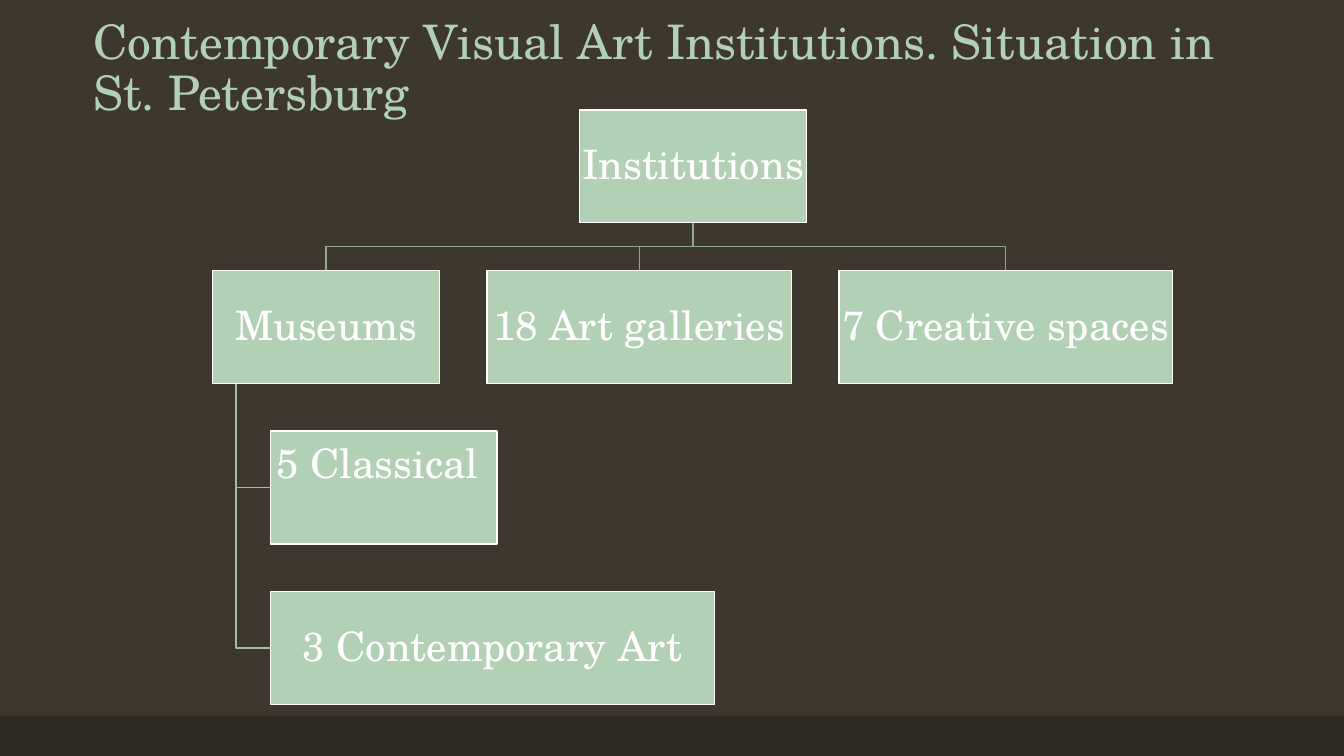
"""Build the slide on contemporary visual art institutions in St. Petersburg."""
from pptx import Presentation
from pptx.dml.color import RGBColor
from pptx.enum.shapes import MSO_SHAPE
from pptx.enum.text import MSO_ANCHOR, PP_ALIGN
from pptx.util import Inches, Pt

FONT = "TeX Gyre Schola"
GREEN = "B2D0B4"
WHITE = "FFFFFF"


def rgb(value):
    return RGBColor.from_string(value)


def write(sp, text, size, color, frame, align):
    tf = sp.text_frame
    for name, value in frame.items():
        setattr(tf, name, value)
    p = tf.paragraphs[0]
    p.alignment = align
    p.line_spacing = 0.9
    r = p.add_run()
    r.text = text
    for name, value in {"name": FONT, "size": Pt(size)}.items():
        setattr(r.font, name, value)
    r.font.color.rgb = rgb(color)


prs = Presentation()
prs.slide_width, prs.slide_height = Inches(13.33), Inches(7.5)
s = prs.slides.add_slide(prs.slide_layouts[6])
s.background.fill.solid()
s.background.fill.fore_color.rgb = rgb("3D372E")

band = s.shapes.add_shape(MSO_SHAPE.RECTANGLE, 0, Inches(7.1), prs.slide_width, Inches(0.4))
band.shadow.inherit = False
band.fill.solid()
band.fill.fore_color.rgb = rgb("2E2923")
band.line.fill.background()

title = s.shapes.add_textbox(Inches(0.83), 0, Inches(11.5), Inches(1.25))
write(title, "Contemporary Visual Art Institutions. Situation in St. Petersburg", 34, GREEN,
      {"word_wrap": True, "vertical_anchor": MSO_ANCHOR.BOTTOM}, PP_ALIGN.LEFT)

box_h = 1.12
row_step = 1.593
rows = [1.09 + row_step * i for i in range(4)]
boxes = [
    ("Institutions", 5.75, 0, 2.25),
    ("Museums", 2.11, 1, 2.25),
    ("5 Classical", 2.68, 2, 2.25),
    ("3 Contemporary Art", 2.68, 3, 4.41),
    ("18 Art galleries", 4.83, 1, 3.02),
    ("7 Creative spaces", 8.32, 1, 3.31),
]

root_x = 6.875
root_bottom = rows[0] + box_h
bus_y = (root_bottom + rows[1]) / 2
stem_x, child_x = 2.34, 2.68
branches = [
    ("8FA790", [(root_x, root_bottom), (root_x, bus_y), (x + w / 2, bus_y), (x + w / 2, rows[1])])
    for text, x, row, w in boxes if row == 1
] + [
    ("A2BDA3", [(stem_x, rows[1] + box_h), (stem_x, y + box_h / 2), (child_x, y + box_h / 2)])
    for y in rows[2:]
]
for color, points in branches:
    points = [(Inches(x), Inches(y)) for x, y in points]
    builder = s.shapes.build_freeform(*points[0])
    builder.add_line_segments(points[1:], close=False)
    sp = builder.convert_to_shape()
    sp.shadow.inherit = False
    sp.fill.background()
    sp.line.color.rgb = rgb(color)
    sp.line.width = Pt(1)

for text, x, row, w in boxes:
    sp = s.shapes.add_shape(MSO_SHAPE.RECTANGLE, Inches(x), Inches(rows[row]), Inches(w), Inches(box_h))
    sp.shadow.inherit = False
    sp.fill.solid()
    sp.fill.fore_color.rgb = rgb(GREEN)
    sp.line.color.rgb = rgb(WHITE)
    sp.line.width = Pt(1)
    frame = {"word_wrap": True, "vertical_anchor": MSO_ANCHOR.MIDDLE}
    for side in ("left", "top", "right", "bottom"):
        frame[f"margin_{side}"] = Inches(0.02)
    if text == "5 Classical":
        frame.update(margin_right=Inches(0.14), margin_bottom=Inches(0.46))
    write(sp, text, 29, WHITE, frame, PP_ALIGN.CENTER)

prs.save("out.pptx")
